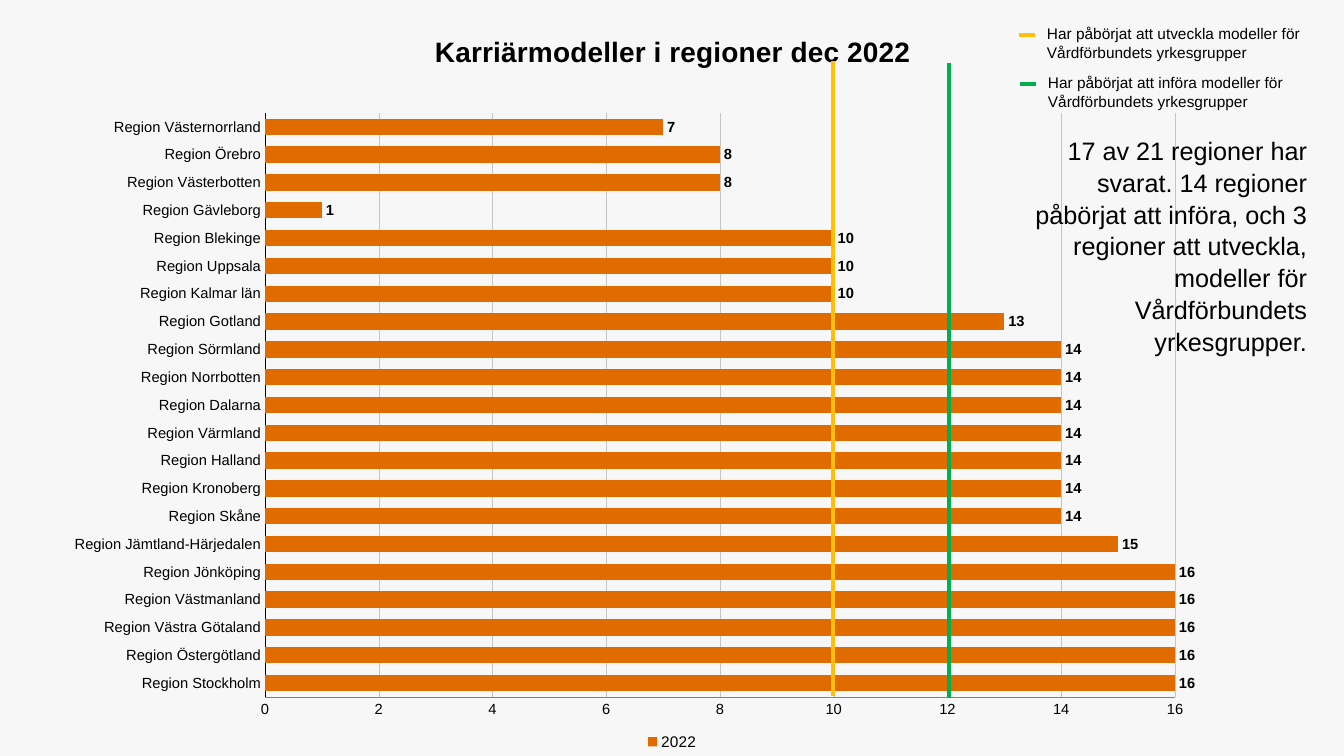
from lxml.etree import SubElement
from pptx import Presentation
from pptx.chart.data import CategoryChartData
from pptx.dml.color import RGBColor
from pptx.enum.chart import XL_CHART_TYPE, XL_LABEL_POSITION, XL_LEGEND_POSITION, XL_TICK_MARK
from pptx.enum.shapes import MSO_CONNECTOR
from pptx.enum.text import PP_ALIGN
from pptx.oxml import parse_xml
from pptx.oxml.ns import nsdecls, qn
from pptx.util import Pt

PX = 914400 / 100.8
W, H = 1344, 756
FONT = "Arial"
BLACK = RGBColor(0x00, 0x00, 0x00)
GRAY = RGBColor(0x80, 0x80, 0x80)
GRID = RGBColor(0xC5, 0xC5, 0xC4)
ORANGE = RGBColor(0xE0, 0x6C, 0x00)
YELLOW = RGBColor(0xFF, 0xBE, 0x0A)
GREEN = RGBColor(0x00, 0xB0, 0x50)
PALE = RGBColor(0xF7, 0xF7, 0xF7)

TITLE = "Karriärmodeller i regioner dec 2022"
SERIES = "2022"
REGIONS = [
    ("Stockholm", 16), ("Östergötland", 16), ("Västra Götaland", 16),
    ("Västmanland", 16), ("Jönköping", 16), ("Jämtland-Härjedalen", 15),
    ("Skåne", 14), ("Kronoberg", 14), ("Halland", 14), ("Värmland", 14),
    ("Dalarna", 14), ("Norrbotten", 14), ("Sörmland", 14), ("Gotland", 13),
    ("Kalmar län", 10), ("Uppsala", 10), ("Blekinge", 10), ("Gävleborg", 1),
    ("Västerbotten", 8), ("Örebro", 8), ("Västernorrland", 7),
]
# text, colour, threshold x, threshold top, key x, key y
LEVELS = [
    ("Har påbörjat att utveckla modeller för Vårdförbundets yrkesgrupper", YELLOW, 833, 61, 1019, 35),
    ("Har påbörjat att införa modeller för Vårdförbundets yrkesgrupper", GREEN, 949, 63, 1020, 84),
]
SUMMARY = ("17 av 21 regioner har svarat. 14 regioner påbörjat att införa, och 3 regioner "
           "att utveckla, modeller för Vårdförbundets yrkesgrupper.")
PLOT = (265, 113, 910, 584)
TITLE_AT = (430, 29)
LEGEND_AT = (643, 731)
THRESHOLD_H = 635
KEY_W = 16


def px(n):
    """Turn px into EMU."""
    return round(n * PX)


def style(font, size, bold=False):
    """Give a font the common face and colour."""
    font.name, font.size, font.bold = FONT, Pt(size), bold
    font.color.rgb = BLACK


def add_text(s, text, x, y, w, h, size=11, align=PP_ALIGN.LEFT):
    """Add a wrapped text box."""
    tf = s.shapes.add_textbox(px(x), px(y), px(w), px(h)).text_frame
    tf.word_wrap = True
    p = tf.paragraphs[0]
    p.alignment, p.line_spacing = align, 1.05
    r = p.add_run()
    r.text = text
    style(r.font, size)


def add_line(s, x1, y1, x2, y2, color):
    """Add a straight line without shadow."""
    line = s.shapes.add_connector(MSO_CONNECTOR.STRAIGHT, px(x1), px(y1), px(x2), px(y2))
    line.line.color.rgb, line.line.width = color, Pt(3)
    SubElement(line._element.spPr, qn("a:effectLst"))


def place(el, index, x, y, w=None, h=None):
    """Set the manual layout of a chart part."""
    for old in el.findall(qn("c:layout")):
        el.remove(old)
    layout = parse_xml(f"<c:layout {nsdecls('c')}><c:manualLayout/></c:layout>")
    values = [("xMode", "edge"), ("yMode", "edge"), ("x", round(x / W, 4)), ("y", round(y / H, 4))]
    if w:
        values = [("layoutTarget", "inner")] + values + [("w", round(w / W, 4)), ("h", round(h / H, 4))]
    for tag, value in values:
        SubElement(layout[0], qn(f"c:{tag}")).set("val", str(value))
    el.insert(index, layout)


def format_axis(axis, color):
    """Set the look of one axis."""
    axis.major_tick_mark = axis.minor_tick_mark = XL_TICK_MARK.NONE
    style(axis.tick_labels.font, 10.5)
    axis.format.line.color.rgb, axis.format.line.width = color, Pt(0.5)


def add_regions(s):
    """Add the bar chart of regions."""
    data = CategoryChartData()
    data.categories = [f"Region {name}" for name, _ in REGIONS]
    data.add_series(SERIES, [value for _, value in REGIONS])
    chart = s.shapes.add_chart(XL_CHART_TYPE.BAR_CLUSTERED, 0, 0, px(W), px(H), data).chart
    style(chart.font, 9)
    chart.has_title = True
    p = chart.chart_title.text_frame.paragraphs[0]
    r = p.add_run()
    r.text = TITLE
    style(r.font, 20, True)
    chart.has_legend = True
    legend = chart.legend
    legend.position, legend.include_in_layout = XL_LEGEND_POSITION.BOTTOM, False
    style(legend.font, 11)

    format_axis(chart.category_axis, BLACK)
    axis = chart.value_axis
    format_axis(axis, GRAY)
    axis.minimum_scale, axis.maximum_scale, axis.major_unit = 0, 16, 2
    grid = axis.major_gridlines.format.line
    grid.color.rgb, grid.width = GRID, Pt(0.13)

    plot = chart.plots[0]
    plot.gap_width, plot.overlap, plot.vary_by_categories = 70, -15, False
    bars = plot.series[0]
    bars.format.fill.solid()
    bars.format.fill.fore_color.rgb = ORANGE
    labels = bars.data_labels
    labels.show_value, labels.position = True, XL_LABEL_POSITION.OUTSIDE_END
    style(labels.font, 10.5, True)

    root = chart._chartSpace.chart
    place(root.plotArea, 0, *PLOT)
    place(root.find(qn("c:title")), 1, *TITLE_AT)
    place(root.find(qn("c:legend")), 1, *LEGEND_AT)
    root.addnext(parse_xml(
        f'<c:spPr {nsdecls("c", "a")}><a:solidFill><a:srgbClr val="{PALE}"/></a:solidFill>'
        "<a:ln><a:noFill/></a:ln></c:spPr>"))


def main():
    """Build the slide."""
    prs = Presentation()
    prs.slide_width, prs.slide_height = px(W), px(H)
    s = prs.slides.add_slide(prs.slide_layouts[6])
    add_regions(s)
    for text, color, x, top, key_x, key_y in LEVELS:
        add_line(s, x, top, x, top + THRESHOLD_H, color)
        add_line(s, key_x, key_y, key_x + KEY_W, key_y, color)
        add_text(s, text, key_x + 18, key_y - 17, 293, 47)
    add_text(s, SUMMARY, 1024, 129, 293, 254, size=18, align=PP_ALIGN.RIGHT)
    prs.save("out.pptx")


if __name__ == "__main__":
    main()
